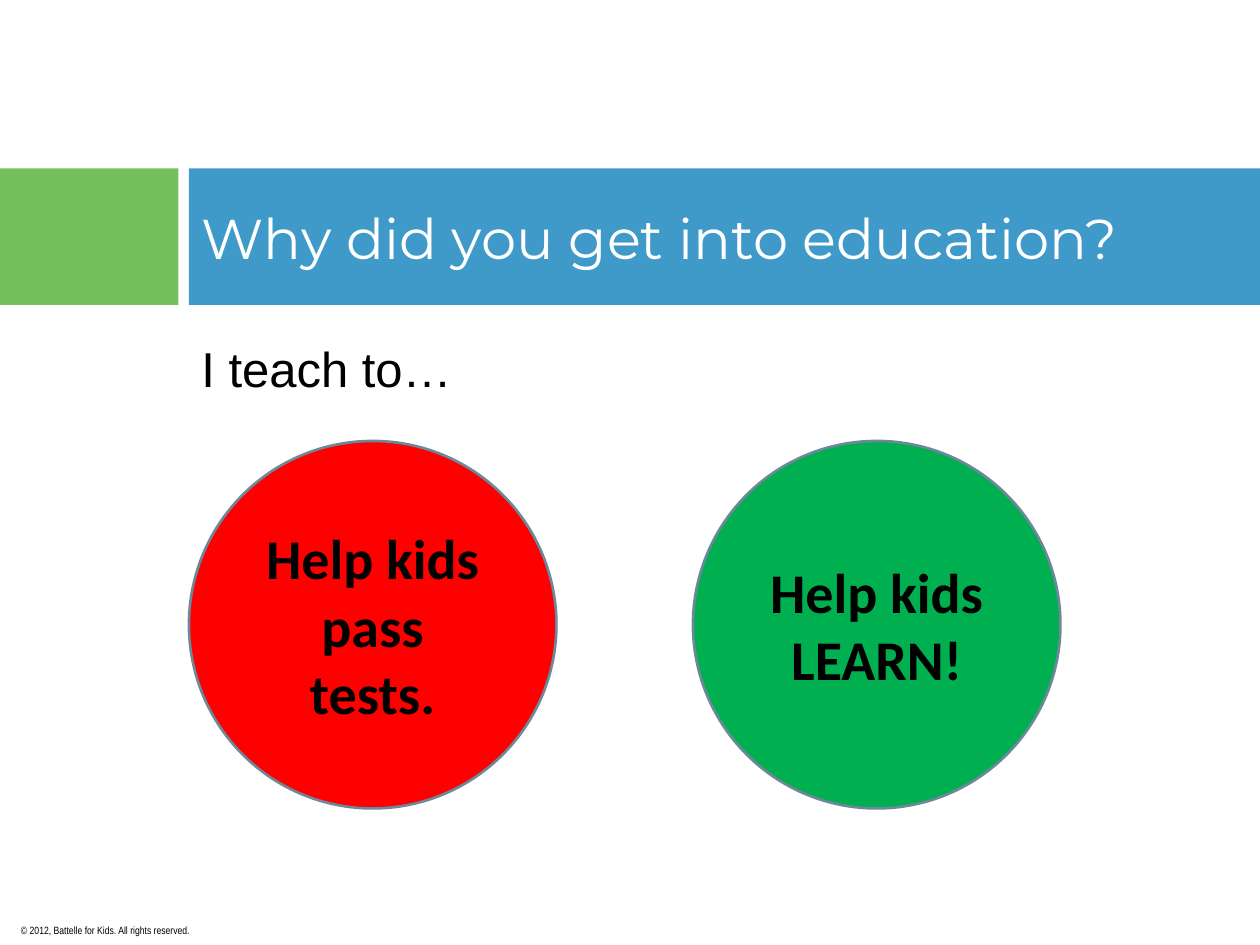
from pptx import Presentation
from pptx.dml.color import RGBColor
from pptx.enum.shapes import MSO_SHAPE as Preset
from pptx.enum.text import MSO_ANCHOR as Anchor, PP_ALIGN as Align
from pptx.util import Pt

WIDTH, HEIGHT = 720, 540
CONTENT_LEFT = 108
GREEN, BLUE, WHITE, BLACK = "73C05D", "3F9AC9", "FFFFFF", "000000"


def color(hex_value):
    return RGBColor.from_string(hex_value)


def set_text(shape, text, *, size, font, fill=BLACK, bold=False,
             align=Align.LEFT, anchor=Anchor.TOP, margins=(7.2, 3.6)):
    """Write one paragraph; margins are horizontal and vertical, in points."""
    frame = shape.text_frame
    frame.word_wrap = True
    frame.vertical_anchor = anchor
    frame.margin_left = frame.margin_right = Pt(margins[0])
    frame.margin_top = frame.margin_bottom = Pt(margins[1])
    paragraph = frame.paragraphs[0]
    paragraph.alignment = align
    run = paragraph.add_run()
    run.text = text
    run.font.size = Pt(size)
    run.font.name = font
    run.font.bold = bold
    run.font.color.rgb = color(fill)


def add_text(slide, box, text, **text_format):
    set_text(slide.shapes.add_textbox(*map(Pt, box)), text, **text_format)


def add_filled_shape(slide, preset, box, fill, line=None):
    shape = slide.shapes.add_shape(preset, *map(Pt, box))
    shape.shadow.inherit = False
    shape.fill.solid()
    shape.fill.fore_color.rgb = color(fill)
    if line:
        shape.line.color.rgb = color(line)
        shape.line.width = Pt(1.5)
    else:
        shape.line.fill.background()
    return shape


def add_title_band(slide, box, title, gap=6):
    left, top, width, height = box
    bar_left = left + CONTENT_LEFT
    add_filled_shape(slide, Preset.RECTANGLE,
                     (left, top, CONTENT_LEFT - gap, height), GREEN)
    add_filled_shape(slide, Preset.RECTANGLE,
                     (bar_left, top, width - CONTENT_LEFT, height), BLUE)
    add_text(slide, (bar_left, top, width - CONTENT_LEFT - 12, height), title,
             size=32, font="Montserrat", fill=WHITE, anchor=Anchor.MIDDLE)


def add_answer_circles(slide, box, answers, pitch=288):
    """Place equal circles, as tall as the box, at a fixed pitch."""
    left, top, _, diameter = box
    for index, (text, fill) in enumerate(answers):
        circle = add_filled_shape(
            slide, Preset.OVAL,
            (left + index * pitch, top, diameter, diameter), fill, line="6D879B")
        set_text(circle, text, size=32, font="Calibri", bold=True,
                 align=Align.CENTER, anchor=Anchor.MIDDLE)


def main():
    presentation = Presentation()
    presentation.slide_width, presentation.slide_height = Pt(WIDTH), Pt(HEIGHT)
    slide = presentation.slides.add_slide(presentation.slide_layouts[6])

    add_title_band(slide, (0, 96.25, WIDTH, 78), "Why did you get into education?")
    add_text(slide, (12, 528, 120, 6),
             "© 2012, Battelle for Kids. All rights reserved.",
             size=6, font="Arial Narrow", margins=(0, 0))
    add_text(slide, (CONTENT_LEFT, 186.5, 561, 252), "I teach to…",
             size=28, font="Arial", margins=(7.2, 7))
    add_answer_circles(slide, (CONTENT_LEFT, 252, 498, 210), [
        ("Help kids pass tests.", "FF0000"),
        ("Help kids LEARN!", "00B050"),
    ])
    presentation.save("out.pptx")


if __name__ == "__main__":
    main()
